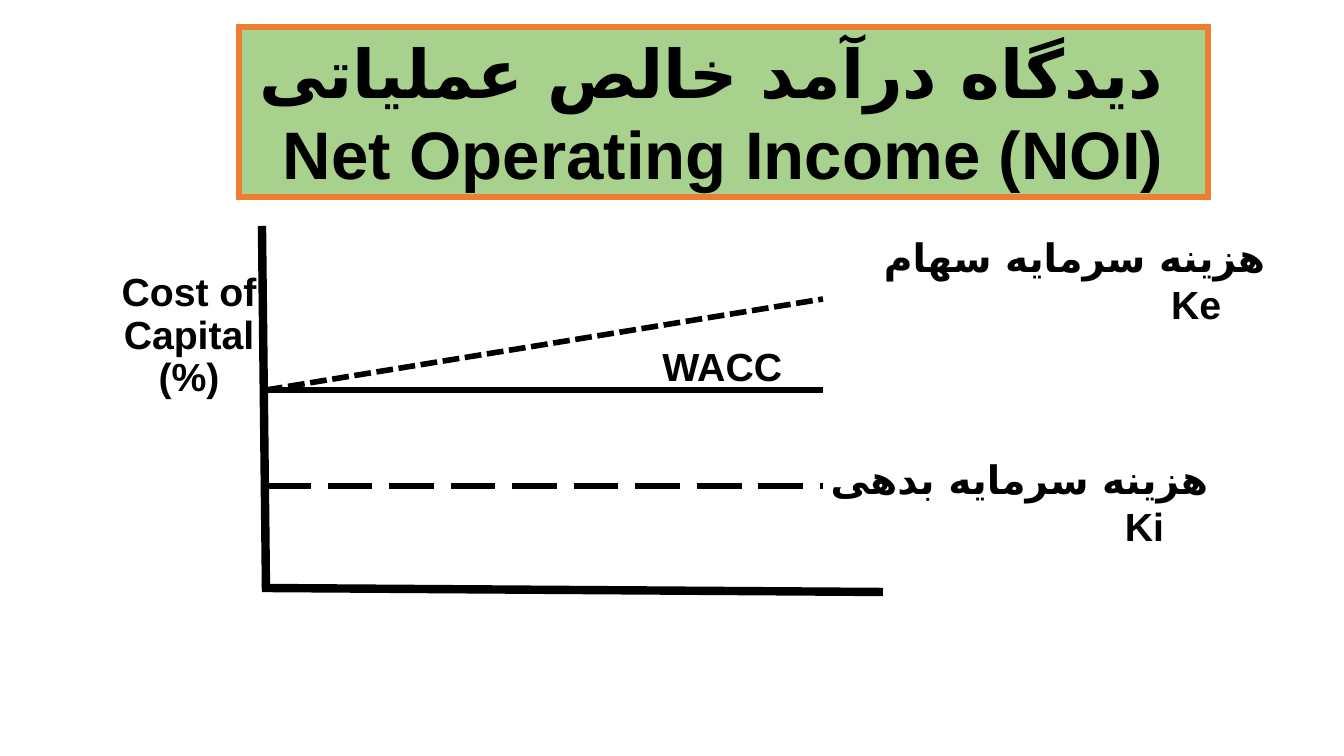
from lxml import etree
from pptx import Presentation
from pptx.dml.color import RGBColor
from pptx.enum.dml import MSO_LINE_DASH_STYLE as DASH
from pptx.enum.shapes import MSO_CONNECTOR, MSO_SHAPE
from pptx.enum.text import MSO_ANCHOR, MSO_AUTO_SIZE, PP_ALIGN
from pptx.oxml.ns import qn
from pptx.util import Emu, Pt

PX = 914400 / 100.8
COLORS = {"ink": "000000", "title fill": "A9D18E", "title line": "ED7D31"}
FONT = "Arial"
PERSIAN_FONT = "DejaVu Sans"


def px(*lengths):
    return [Emu(round(length * PX)) for length in lengths]


def write(frame, lines, size, align, last_indent=0, spacing=None):
    """Fill a frame with bold right-to-left paragraphs."""
    for index, line in enumerate(lines):
        paragraph = frame.paragraphs[0] if index == 0 else frame.add_paragraph()
        paragraph.alignment = align
        paragraph.line_spacing = spacing
        properties = paragraph._p.get_or_add_pPr()
        properties.set("rtl", "1")
        if last_indent and index == len(lines) - 1:
            properties.set("marL", str(px(last_indent)[0]))
        run = paragraph.add_run()
        run.text = line
        run.font.name = FONT
        run.font.size = Pt(size)
        run.font.bold = True
        run.font.color.rgb = RGBColor.from_string(COLORS["ink"])
        script_font = FONT if line.isascii() else PERSIAN_FONT
        etree.SubElement(run._r.rPr, qn("a:cs"), typeface=script_font)


presentation = Presentation()
presentation.slide_width, presentation.slide_height = px(1344, 756)
slide = presentation.slides.add_slide(presentation.slide_layouts[6])

# Title banner with square corners
banner = slide.shapes.add_shape(MSO_SHAPE.RECTANGLE, *px(239, 27, 969, 170))
banner.shadow.inherit = False
banner.fill.solid()
banner.fill.fore_color.rgb = RGBColor.from_string(COLORS["title fill"])
banner.line.color.rgb = RGBColor.from_string(COLORS["title line"])
banner.line.width = Pt(4)
etree.SubElement(banner._element.spPr.find(qn("a:ln")), qn("a:miter"), lim="800000")
banner.text_frame.vertical_anchor = MSO_ANCHOR.MIDDLE
write(banner.text_frame, [" دیدگاه درآمد خالص عملیاتی", "Net Operating Income (NOI)"],
      48, PP_ALIGN.CENTER)

# Axes and cost curves: start, end, width, dash
lines = [
    ((262, 226), (266, 588), 6, None),
    ((262, 588), (883, 592), 6, None),
    ((266, 486), (823, 486), 4, DASH.LONG_DASH),
    ((266, 390), (823, 299), 4, DASH.SQUARE_DOT),
    ((266, 390), (823, 390), 4, None),
]
for start, end, width, dash in lines:
    connector = slide.shapes.add_connector(MSO_CONNECTOR.STRAIGHT, *px(*start, *end))
    connector.line.color.rgb = RGBColor.from_string(COLORS["ink"])
    connector.line.width = Pt(width)
    if dash:
        connector.line.dash_style = dash
    etree.SubElement(connector._element.spPr, qn("a:effectLst"))

# Labels: box, lines, alignment, indent of the last line, spacing, wrap
labels = [
    ((86, 268, 206, 138), ["Cost of Capital (%)"], PP_ALIGN.CENTER, 0, 0.9, True),
    ((651, 337, 141, 57), ["WACC"], PP_ALIGN.RIGHT, 0, None, False),
    ((831, 228, 444, 57), ["هزینه سرمایه سهام", "Ke"], PP_ALIGN.RIGHT, 44, None, True),
    ((774, 450, 444, 57), ["هزینه سرمایه بدهی", "Ki"], PP_ALIGN.RIGHT, 44, None, True),
]
for box, texts, align, indent, spacing, wrap in labels:
    label = slide.shapes.add_textbox(*px(*box))
    label.text_frame.word_wrap = wrap
    label.text_frame.auto_size = MSO_AUTO_SIZE.SHAPE_TO_FIT_TEXT
    write(label.text_frame, texts, 28, align, indent, spacing)

presentation.save("out.pptx")
